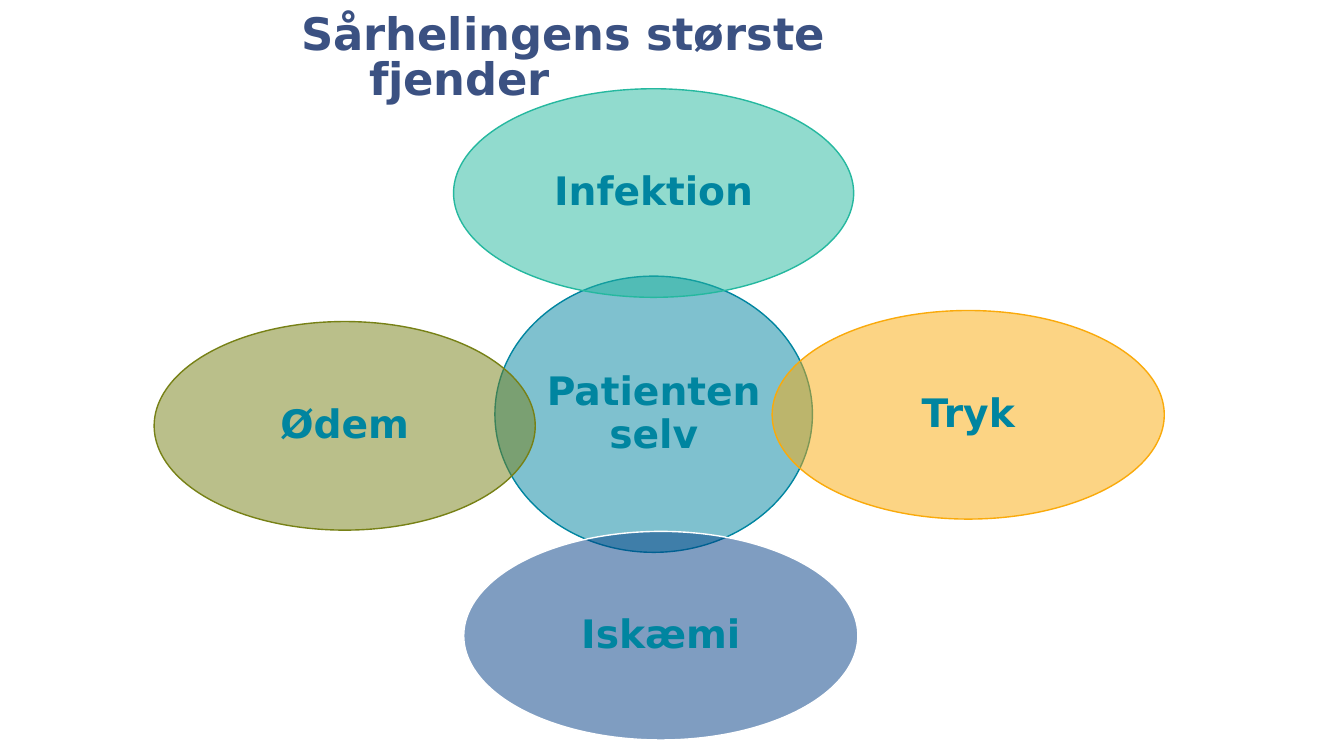
from dataclasses import dataclass

from lxml.etree import SubElement
from pptx import Presentation
from pptx.dml.color import RGBColor
from pptx.enum.shapes import MSO_SHAPE
from pptx.enum.text import MSO_ANCHOR, MSO_AUTO_SIZE, PP_ALIGN
from pptx.oxml.ns import qn
from pptx.slide import Slide
from pptx.util import Pt


@dataclass(frozen=True)
class Theme:
    font: str = "DejaVu Sans"
    title_color: str = "3B5182"
    label_color: str = "0085A0"
    title_size: float = 32
    label_size: float = 28
    opacity: int = 50


@dataclass(frozen=True)
class Factor:
    label: str
    center_x: float
    center_y: float
    width: float
    fill: str
    outline: str
    height: float = 149


THEME = Theme()

# The patient in the middle, then the four enemies around it
FACTORS = [
    Factor("Patienten selv", 466.9, 295.9, 226.8, "0085A0", "0085A0", height=197.3),
    Factor("Infektion", 466.9, 137.9, 285.8, "25B89F", "25B89F"),
    Factor("Tryk", 691.6, 296.3, 280.1, "FAAA0B", "FAAA0B"),
    Factor("Iskæmi", 472, 454.1, 281.5, "003D84", "FFFFFF"),
    Factor("Ødem", 246.2, 304.2, 272.2, "778116", "778116"),
]


def apply(target: object, values: dict) -> None:
    for name, value in values.items():
        setattr(target, name, value)


def write(paragraph, text: str, size: float, color: str):
    span = paragraph.add_run()
    span.text = text
    apply(span.font, {"name": THEME.font, "size": Pt(size), "bold": True})
    span.font.color.rgb = RGBColor.from_string(color)
    return span


def add_title(page: Slide, text: str) -> None:
    box = page.shapes.add_textbox(Pt(214.6), Pt(2.9), Pt(514.8), Pt(40.3))
    frame = box.text_frame
    apply(frame, {
        "word_wrap": True, "auto_size": MSO_AUTO_SIZE.SHAPE_TO_FIT_TEXT,
        "margin_left": 0, "margin_top": Pt(6.5),
        "margin_right": Pt(18), "margin_bottom": 0,
    })
    paragraph = frame.paragraphs[0]
    paragraph.line_spacing = Pt(32.8)
    # Hanging indent: the second line starts further in
    properties = paragraph._p.get_or_add_pPr()
    properties.set("marL", str(Pt(49)))
    properties.set("indent", str(Pt(-48.2)))
    span = write(paragraph, text, THEME.title_size, THEME.title_color)
    span.font._element.set("spc", "-10")


def add_factor(page: Slide, factor: Factor) -> None:
    oval = page.shapes.add_shape(
        MSO_SHAPE.OVAL,
        Pt(factor.center_x - factor.width / 2), Pt(factor.center_y - factor.height / 2),
        Pt(factor.width), Pt(factor.height))
    oval.shadow.inherit = False
    oval.fill.solid()
    oval.fill.fore_color.rgb = RGBColor.from_string(factor.fill)
    oval.line.color.rgb = RGBColor.from_string(factor.outline)
    oval.line.width = Pt(1)
    # Translucent fill, so that overlaps show
    color = oval._element.spPr.find(qn("a:solidFill")).find(qn("a:srgbClr"))
    SubElement(color, qn("a:alpha")).set("val", str(THEME.opacity * 1000))

    frame = oval.text_frame
    apply(frame, {
        "word_wrap": True, "vertical_anchor": MSO_ANCHOR.MIDDLE,
        "margin_left": Pt(2.9), "margin_top": Pt(2.9),
        "margin_right": Pt(2.9), "margin_bottom": Pt(2.9),
    })
    paragraph = frame.paragraphs[0]
    apply(paragraph, {"alignment": PP_ALIGN.CENTER, "line_spacing": 0.9})
    write(paragraph, factor.label, THEME.label_size, THEME.label_color)


def main() -> None:
    deck = Presentation()
    apply(deck, {"slide_width": Pt(960), "slide_height": Pt(540)})
    page = deck.slides.add_slide(deck.slide_layouts[6])
    add_title(page, "Sårhelingens største fjender")
    for factor in FACTORS:
        add_factor(page, factor)
    deck.save("out.pptx")


if __name__ == "__main__":
    main()
